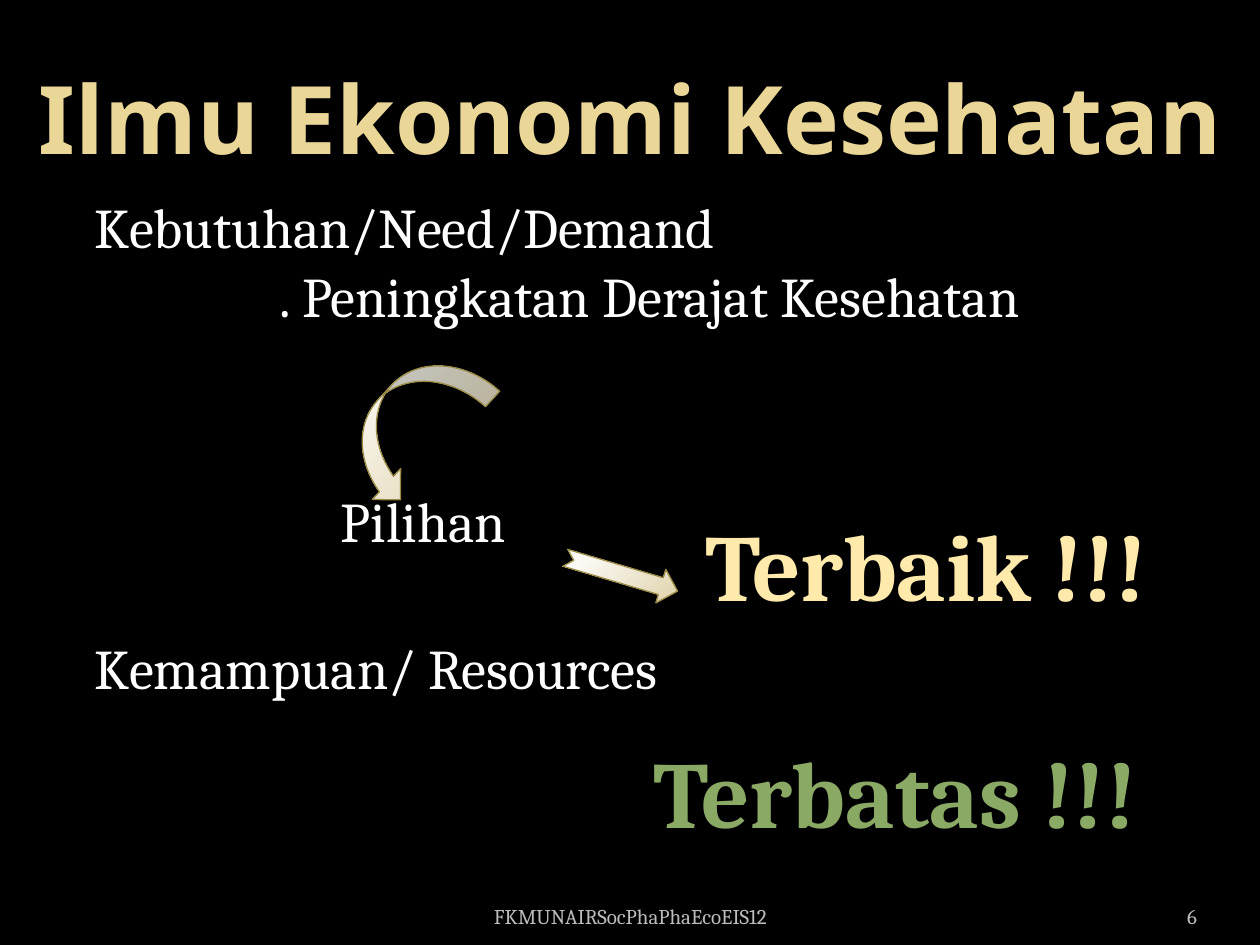
"""Build the slide on health economics: need, choice and limited resources."""
from lxml.etree import SubElement
from pptx import Presentation
from pptx.dml.color import RGBColor
from pptx.enum.shapes import MSO_SHAPE as Kind
from pptx.enum.text import MSO_ANCHOR as Anchor, PP_ALIGN as Align
from pptx.oxml.ns import qn
from pptx.util import Pt

PX = 914400 // 126
BLACK = RGBColor(0, 0, 0)
WHITE = RGBColor(255, 255, 255)
GREY = RGBColor(0xBD, 0xBD, 0xBD)
GOLD = RGBColor(0xEA, 0xD6, 0x96)
CREAM = RGBColor(0xFF, 0xEA, 0xAC)
GREEN = RGBColor(0x89, 0xA9, 0x65)
PALE = RGBColor(0xFB, 0xFA, 0xF6)
SAND = RGBColor(0xDE, 0xD1, 0xA8)
EDGE = RGBColor(0x99, 0x89, 0x46)

SIZE = 1260, 945
TITLE = "Ilmu Ekonomi Kesehatan", (0, 38, 1260, 157)
BODY = (63, 186, 1134, 683)
ROW, GAP = 44.6, 1
LINES = [
    ("Kebutuhan/Need/Demand", 0, 19),
    (". Peningkatan Derajat Kesehatan", 1, 204),
    ("Pilihan", 4, 265),
    ("Kemampuan/ Resources", 6, 19),
]
NOTES = [
    ("FKMUNAIRSocPhaPhaEcoEIS12", (431, 885, 399, 50),
     dict(size=12, color=GREY, anchor=Anchor.BOTTOM)),
    ("6", (1092, 885, 105, 50),
     dict(size=12, color=GREY, anchor=Anchor.BOTTOM, align=Align.RIGHT, side=0)),
    ("Terbaik !!!", (689, 501, 474, 127), dict(size=54, color=CREAM, bold=True)),
    ("Terbatas !!!", (610, 728, 571, 127), dict(size=54, color=GREEN, bold=True)),
]
ARROWS = [
    (Kind.CURVED_RIGHT_ARROW, (370, 341, 84, 168), 42.4),
    (Kind.NOTCHED_RIGHT_ARROW, (563, 557, 117, 35), 16.5),
]


def emu(box):
    return [n * PX for n in box]


def place(shape, box):
    shape.left, shape.top, shape.width, shape.height = emu(box)


def write(frame, lines, size, color, font="Cambria", bold=False,
          align=Align.CENTER, anchor=Anchor.TOP, side=13, wrap=True):
    frame.word_wrap = wrap
    frame.vertical_anchor = anchor
    frame.margin_left = frame.margin_right = side * PX
    for i, line in enumerate(lines):
        para = frame.paragraphs[0] if i == 0 else frame.add_paragraph()
        para.alignment = align
        run = para.add_run()
        run.text = line
        run.font.name, run.font.size, run.font.bold = font, Pt(size), bold
        run.font.color.rgb = color


def indent(frame):
    last = -1
    for para, (_, row, left) in zip(frame.paragraphs, LINES):
        para.space_before = Pt(GAP + (row - last - 1) * ROW)
        props = para._p.get_or_add_pPr()
        props.set("marL", str(left * PX))
        props.set("indent", "0")
        SubElement(props, qn("a:buNone"))
        last = row


def arrow(shapes, kind, box, turn):
    shape = shapes.add_shape(kind, *emu(box))
    shape.rotation = turn
    shape.shadow.inherit = False
    shape.line.color.rgb = EDGE
    shape.line.width = Pt(0.75)
    shape.fill.gradient()
    for stop, color, pos in zip(shape.fill.gradient_stops, (PALE, SAND), (0.2, 1)):
        stop.color.rgb, stop.position = color, pos
    grad = shape._element.spPr.find(qn("a:gradFill"))
    grad.remove(grad.find(qn("a:lin")))
    round_ = SubElement(grad, qn("a:path"), {"path": "circle"})
    SubElement(round_, qn("a:fillToRect"),
               {"l": "-15000", "t": "-15000", "r": "115000", "b": "115000"})


def main():
    deck = Presentation()
    deck.slide_width, deck.slide_height = emu(SIZE)
    slide = deck.slides.add_slide(deck.slide_layouts[1])
    back = slide.background.fill
    back.solid()
    back.fore_color.rgb = BLACK

    title, body = slide.placeholders
    place(title, TITLE[1])
    write(title.text_frame, [TITLE[0]], 54, GOLD, font="Noto Sans", bold=True,
          anchor=Anchor.MIDDLE)
    place(body, BODY)
    write(body.text_frame, [line[0] for line in LINES], 32, WHITE, align=Align.LEFT)
    indent(body.text_frame)

    for text, box, style in NOTES:
        note = slide.shapes.add_textbox(*emu(box))
        write(note.text_frame, [text], wrap=False, **style)
    for item in ARROWS:
        arrow(slide.shapes, *item)
    deck.save("out.pptx")


if __name__ == "__main__":
    main()
